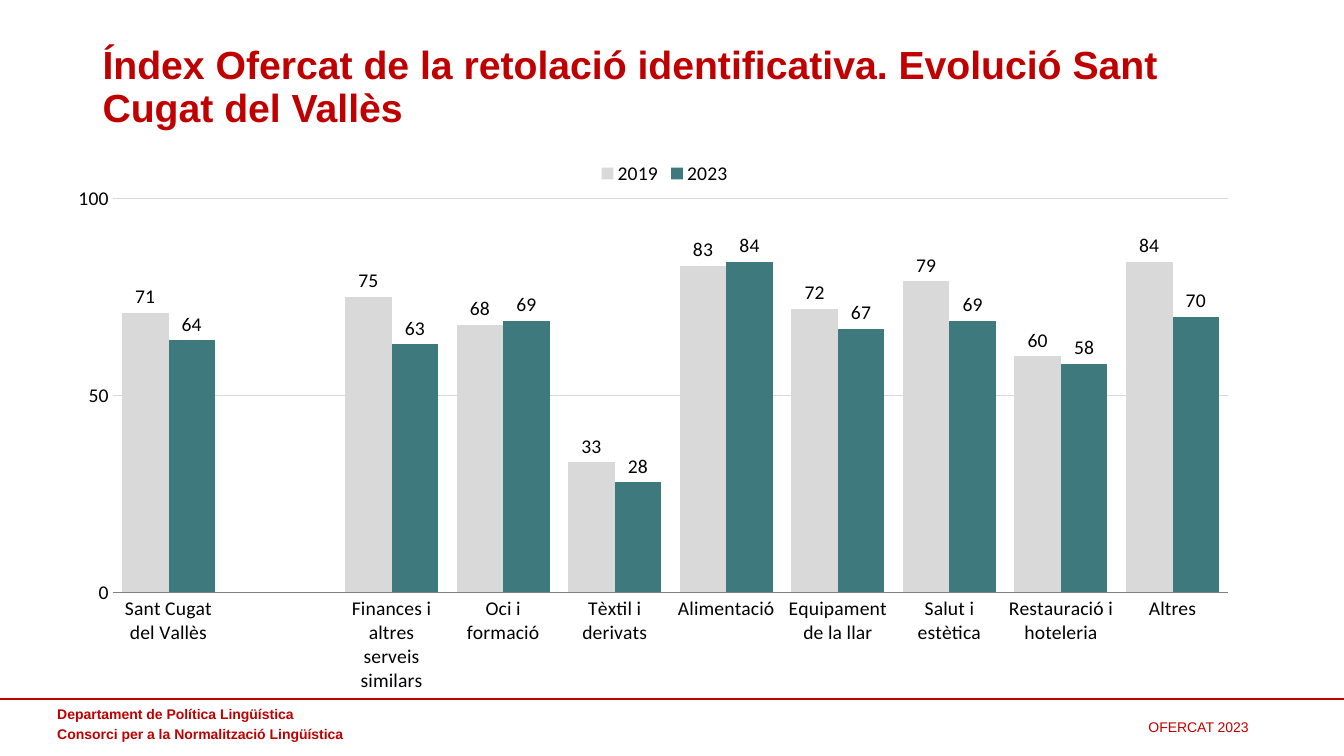
"""Build the Ofercat slide on shop sign language in Sant Cugat del Vallès."""
from dataclasses import dataclass

from lxml.etree import SubElement
from pptx import Presentation
from pptx.chart.data import CategoryChartData
from pptx.dml.color import RGBColor
from pptx.enum.chart import (XL_CHART_TYPE, XL_LABEL_POSITION,
                             XL_LEGEND_POSITION, XL_TICK_MARK)
from pptx.enum.shapes import MSO_CONNECTOR
from pptx.enum.text import MSO_ANCHOR, PP_ALIGN
from pptx.oxml.ns import qn
from pptx.util import Pt


@dataclass(frozen=True)
class Theme:
    red: str = "C00000"
    black: str = "000000"
    light: str = "D9D9D9"
    teal: str = "3E797D"
    axis: str = "808080"
    head: str = "Arial"
    body: str = "Calibri"
    title: int = 28
    label: int = 14
    foot: int = 10


class Board:
    def __init__(self, slide, theme):
        self.slide = slide
        self.theme = theme

    def font(self, font, name, size, color, bold=False):
        font.name, font.size, font.bold = name, Pt(size), bold
        font.color.rgb = RGBColor.from_string(color)

    def stroke(self, line, color, width):
        line.color.rgb = RGBColor.from_string(color)
        line.width = Pt(width)

    def text(self, box, lines, size, bold=False, space=1.14,
             align=PP_ALIGN.LEFT, anchor=MSO_ANCHOR.TOP):
        frame = self.slide.shapes.add_textbox(*map(Pt, box)).text_frame
        frame.word_wrap = True
        frame.vertical_anchor = anchor
        for i, line in enumerate(lines):
            para = frame.add_paragraph() if i else frame.paragraphs[0]
            para.alignment, para.line_spacing = align, space
            run = para.add_run()
            run.text = line
            self.font(run.font, self.theme.head, size, self.theme.red, bold)

    def rule(self, left, right, top):
        line = self.slide.shapes.add_connector(
            MSO_CONNECTOR.STRAIGHT, Pt(left), Pt(top), Pt(right), Pt(top))
        self.stroke(line.line, self.theme.red, 1.5)
        SubElement(line.element.spPr, qn("a:effectLst"))

    def chart(self, box, cats, series, plot):
        look = self.theme
        data = CategoryChartData(number_format="#,##0")
        data.categories = cats
        for name, vals, _ in series:
            data.add_series(name, vals)
        chart = self.slide.shapes.add_chart(
            XL_CHART_TYPE.COLUMN_CLUSTERED, *map(Pt, box), data).chart
        self.font(chart.font, look.body, look.label, look.black)
        chart.has_title = False
        chart.has_legend = True
        chart.legend.position = XL_LEGEND_POSITION.TOP
        chart.legend.include_in_layout = False
        self.font(chart.legend.font, look.body, look.label, look.black)
        self.axes(chart)
        bars = chart.plots[0]
        bars.gap_width, bars.overlap = 40, 0
        bars.vary_by_categories = False
        for bar, (_, _, color) in zip(bars.series, series):
            bar.format.fill.solid()
            bar.format.fill.fore_color.rgb = RGBColor.from_string(color)
            bar.invert_if_negative = False
            tags = bar.data_labels
            tags.show_value = True
            tags.position = XL_LABEL_POSITION.OUTSIDE_END
            tags.number_format = "#,##0"
            tags.number_format_is_linked = False
            self.font(tags.font, look.body, look.label, look.black)
        self.place(chart, plot)

    def axes(self, chart):
        look = self.theme
        cat, val = chart.category_axis, chart.value_axis
        for axis in (cat, val):
            axis.major_tick_mark = XL_TICK_MARK.NONE
            self.font(axis.tick_labels.font, look.body, look.label, look.black)
        self.stroke(cat.format.line, look.axis, 0.75)
        val.format.line.fill.background()
        val.minimum_scale, val.maximum_scale, val.major_unit = 0, 100, 50
        val.tick_labels.number_format = "General"
        val.tick_labels.number_format_is_linked = False
        self.stroke(val.major_gridlines.format.line, look.light, 0.75)

    def place(self, chart, plot):
        area = chart.element.find(".//" + qn("c:plotArea"))
        for old in area.findall(qn("c:layout")):
            area.remove(old)
        frame = SubElement(area, qn("c:layout"))
        area.insert(0, frame)
        inner = SubElement(frame, qn("c:manualLayout"))
        pairs = [("layoutTarget", "inner"), ("xMode", "edge"),
                 ("yMode", "edge"), *zip("xywh", plot)]
        for tag, val in pairs:
            SubElement(inner, qn("c:" + tag)).set("val", str(val))


def main():
    deck = Presentation()
    deck.slide_width, deck.slide_height = Pt(960), Pt(540)
    look = Theme()
    board = Board(deck.slides.add_slide(deck.slide_layouts[6]), look)
    board.rule(0, 960, 499)
    board.text((419, 508.3, 480, 20), ["OFERCAT 2023"], look.foot,
               align=PP_ALIGN.RIGHT)
    board.text((33.8, 499, 237, 34.6),
               ["Departament de Política Lingüística",
                "Consorci per a la Normalització Lingüística"],
               look.foot, bold=True)
    board.text((66.2, 28.8, 828, 68.4),
               ["Índex Ofercat de la retolació identificativa. "
                "Evolució Sant Cugat del Vallès"],
               look.title, bold=True, space=0.9, anchor=MSO_ANCHOR.MIDDLE)
    cats = ["Sant Cugat del Vallès", "", "Finances i altres serveis similars",
            "Oci i formació", "Tèxtil i derivats", "Alimentació",
            "Equipament de la llar", "Salut i estètica",
            "Restauració i hoteleria", "Altres"]
    series = [
        ("2019", [71, None, 75, 68, 33, 83, 72, 79, 60, 84], look.light),
        ("2023", [64, None, 63, 69, 28, 84, 67, 69, 58, 70], look.teal)]
    board.chart((55.4, 107.3, 838.8, 387.4), cats, series,
                (0.03, 0.09, 0.95, 0.73))
    deck.save("out.pptx")


if __name__ == "__main__":
    main()
